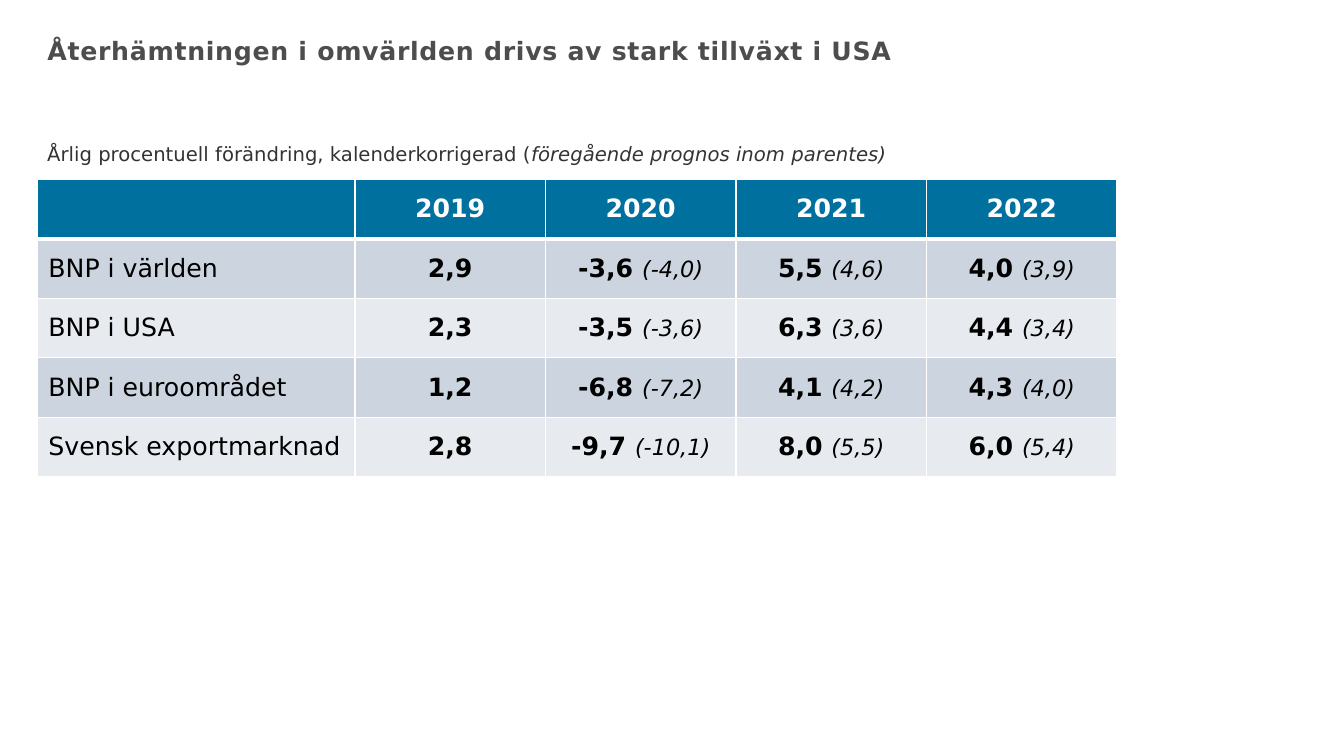
from lxml import etree
from pptx import Presentation
from pptx.dml.color import RGBColor
from pptx.enum import text
from pptx.oxml.ns import qn
from pptx.util import Inches, Pt

FONT = "DejaVu Sans"
TITLE = "Återhämtningen i omvärlden drivs av stark tillväxt i USA"
SUBTITLE = ("Årlig procentuell förändring, kalenderkorrigerad (",
            "föregående prognos inom parentes)")
YEARS = ["2019", "2020", "2021", "2022"]
# Each value is (current forecast, previous forecast)
FORECASTS = [
    ("BNP i världen", ("2,9", ""), ("-3,6", "(-4,0)"), ("5,5", "(4,6)"), ("4,0", "(3,9)")),
    ("BNP i USA", ("2,3", ""), ("-3,5", "(-3,6)"), ("6,3", "(3,6)"), ("4,4", "(3,4)")),
    ("BNP i euroområdet", ("1,2", ""), ("-6,8", "(-7,2)"), ("4,1", "(4,2)"), ("4,3", "(4,0)")),
    ("Svensk exportmarknad", ("2,8", ""), ("-9,7", "(-10,1)"), ("8,0", "(5,5)"), ("6,0", "(5,4)")),
]
HEADER_FILL, BAND_FILLS = "00709E", ("CCD5DF", "E7EBF0")
LEFT, TABLE_TOP = 0.37, 1.78
LABEL_WIDTH, YEAR_WIDTH, ROW_HEIGHT = 3.15, 1.89, 0.59


def color(value):
    return RGBColor.from_string(value)


def style(font, size, value, bold=False):
    font.name, font.size, font.bold = FONT, Pt(size), bold
    font.color.rgb = color(value)


def place(box, top, anchor):
    box.left, box.top = Inches(LEFT), Inches(top)
    box.width, box.height = Inches(9.47), Inches(0.55)
    frame = box.text_frame
    frame.word_wrap = True
    frame.auto_size = text.MSO_AUTO_SIZE.NONE
    frame.vertical_anchor = anchor
    return frame.paragraphs[0]


def add_borders(cell, top, bottom):
    properties = cell._tc.get_or_add_tcPr()
    for side, width in (("L", 1), ("R", 1), ("T", top), ("B", bottom)):
        line = etree.SubElement(properties, qn(f"a:ln{side}"), w=str(Pt(width)))
        fill = etree.SubElement(line, qn("a:solidFill"))
        etree.SubElement(fill, qn("a:srgbClr"), val="FFFFFF")


def format_cell(cell, row, column):
    add_borders(cell, top=3 if row == 1 else 1, bottom=3 if row == 0 else 1)
    cell.fill.solid()
    cell.fill.fore_color.rgb = color(BAND_FILLS[(row - 1) % 2] if row else HEADER_FILL)
    cell.vertical_anchor = text.MSO_ANCHOR.MIDDLE
    cell.margin_left = cell.margin_right = Inches(0.11)
    cell.margin_top = cell.margin_bottom = Inches(0.05)
    para = cell.text_frame.paragraphs[0]
    para.alignment = text.PP_ALIGN.CENTER if column else text.PP_ALIGN.LEFT
    style(para.font, 18, "000000" if row else "FFFFFF", bold=column > 0)
    return para


def build():
    deck = Presentation()
    deck.slide_width, deck.slide_height = Inches(13.33), Inches(7.5)
    page = deck.slides.add_slide(deck.slide_layouts[5])

    # Title
    para = place(page.shapes.title, 0.3, text.MSO_ANCHOR.TOP)
    para.alignment = text.PP_ALIGN.LEFT
    style(para.font, 18, "4D4D4D", bold=True)
    span = para.add_run()
    span.text = TITLE
    span._r.get_or_add_rPr().set("spc", "50")

    # Forecast table
    grid = [["", *YEARS], *FORECASTS]
    table_width = LABEL_WIDTH + YEAR_WIDTH * len(YEARS)
    table = page.shapes.add_table(
        len(grid), len(grid[0]), Inches(LEFT), Inches(TABLE_TOP),
        Inches(table_width), Inches(ROW_HEIGHT * len(grid))).table
    for index, column in enumerate(table.columns):
        column.width = Inches(YEAR_WIDTH if index else LABEL_WIDTH)
    for row, values in enumerate(grid):
        for column, value in enumerate(values):
            para = format_cell(table.cell(row, column), row, column)
            current, previous = (value, "") if isinstance(value, str) else value
            if current:
                para.add_run().text = f"{current} " if previous else current
            if previous:
                span = para.add_run()
                span.text = previous
                span.font.size, span.font.bold, span.font.italic = Pt(16), False, True

    # Subtitle above the table
    box = page.shapes.add_textbox(0, 0, 0, 0)
    para = place(box, 1.14, text.MSO_ANCHOR.BOTTOM)
    style(para.font, 14, "333333")
    for part, italic in zip(SUBTITLE, (False, True)):
        span = para.add_run()
        span.text, span.font.italic = part, italic

    deck.save("out.pptx")


if __name__ == "__main__":
    build()
